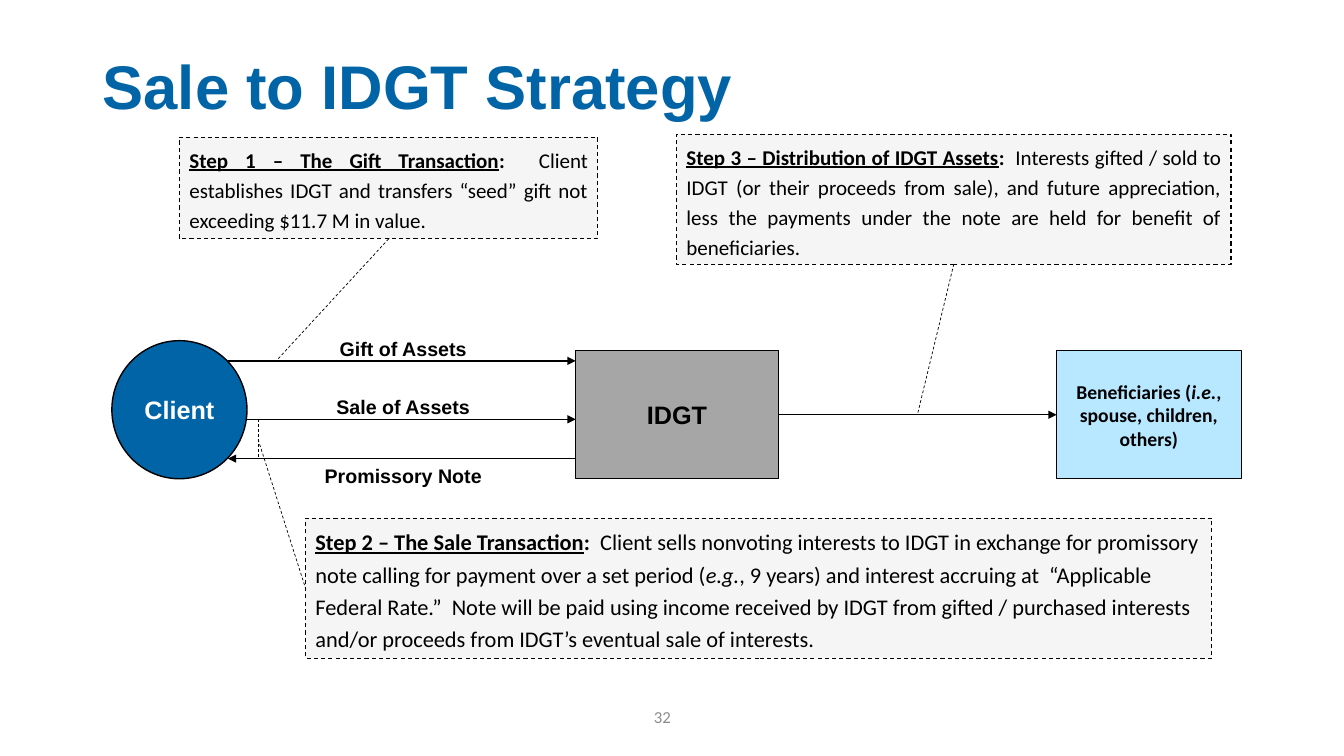
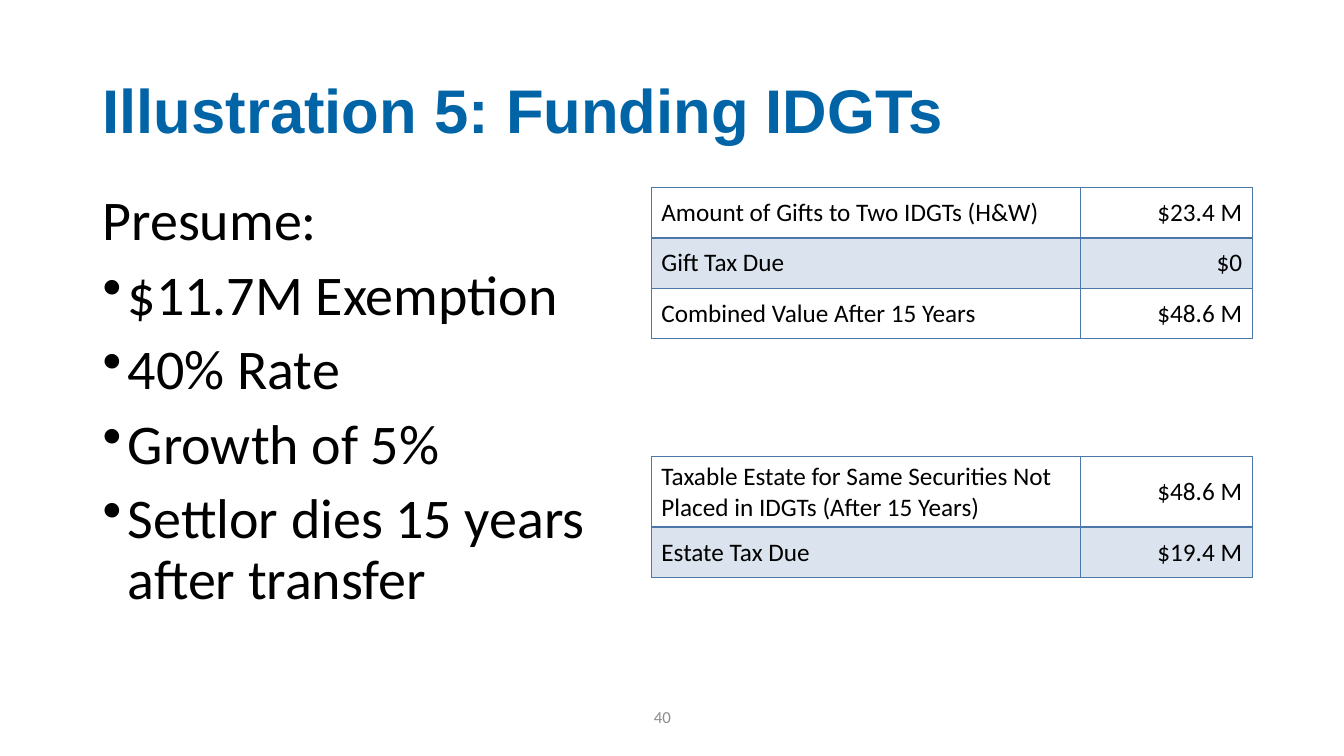
"""Build two slides that explain and illustrate a sale to an IDGT."""
from dataclasses import dataclass
from typing import NamedTuple, Optional, Union

from lxml import etree
from pptx import Presentation
from pptx import slide as s
from pptx import util as u
from pptx.dml import color as c
from pptx.dml import line as ln
from pptx.enum import dml, shapes, text
from pptx.oxml import ns
from pptx.shapes import autoshape as auto
from pptx.text import text as t

LEFT, CENTER = text.PP_ALIGN.LEFT, text.PP_ALIGN.CENTER
RIGHT, JUSTIFY = text.PP_ALIGN.RIGHT, text.PP_ALIGN.JUSTIFY
TOP, MIDDLE = text.MSO_ANCHOR.TOP, text.MSO_ANCHOR.MIDDLE
RECTANGLE, OVAL = shapes.MSO_SHAPE.RECTANGLE, shapes.MSO_SHAPE.OVAL
TOP_SIDE, LEFT_SIDE, BOTTOM_SIDE, RIGHT_SIDE = range(4)


@dataclass(frozen=True)
class Style:
    size: float
    font: str = "Calibri"
    color: str = "000000"
    bold: bool = False
    align: text.PP_ALIGN = LEFT
    anchor: text.MSO_ANCHOR = TOP
    spacing: float = 1.0


@dataclass(frozen=True)
class Theme:
    blue: str = "0064A6"
    gray: str = "A6A6A6"
    sky: str = "B7E8FF"
    pale: str = "F5F5F5"
    ink: str = "000000"
    rule: str = "4B78A8"
    band: str = "DBE4EE"
    thin: float = 0.5
    edge: float = 0.75
    solid: float = 1
    heavy: float = 2
    title: Style = Style(44, "Arial", "0064A6", True, LEFT, MIDDLE, 0.9)
    number: Style = Style(12, color="8C8C8C", align=CENTER, anchor=MIDDLE)
    body: Style = Style(40, spacing=0.9)
    step: Style = Style(15, align=JUSTIFY, spacing=1.2)
    wide_step: Style = Style(16, spacing=1.2)
    client: Style = Style(18, "Arial", "FFFFFF", True, CENTER, MIDDLE)
    trust: Style = Style(18, "Arial", bold=True, align=CENTER, anchor=MIDDLE)
    heirs: Style = Style(14, bold=True, align=CENTER, anchor=MIDDLE)
    flow: Style = Style(14, "Arial", bold=True, align=CENTER)
    label: Style = Style(18, anchor=MIDDLE)
    amount: Style = Style(18, align=RIGHT, anchor=MIDDLE)


THEME = Theme()


class Area(NamedTuple):
    col: float
    row: float
    cols: float
    rows: float


class Point(NamedTuple):
    col: float
    row: float


class Side(NamedTuple):
    box: auto.Shape
    site: int


class Span(NamedTuple):
    words: str
    bold: Optional[bool] = None
    italic: bool = False
    underline: bool = False


class Para(NamedTuple):
    spans: list[Span]
    bullet: bool = False


class Node(NamedTuple):
    area: Area
    fill: str
    style: Style
    spans: list[Span]
    width: float = THEME.solid
    kind: shapes.MSO_SHAPE = RECTANGLE
    dashed: bool = False


class Link(NamedTuple):
    start: Union[Point, Side]
    end: Union[Point, Side]
    leader: bool = False


class Entry(NamedTuple):
    label: str
    amount: str
    rows: float = 5


def grid(cells: float) -> u.Length:
    """Turn grid cells, ten to the inch, into a length."""
    return u.Inches(cells / 10)


def rgb(code: str) -> c.RGBColor:
    """Turn a hex code into a colour."""
    return c.RGBColor.from_string(code)


def add(parent: etree._Element, tag: str, **attributes: str) -> etree._Element:
    """Append a drawing element to its parent."""
    return etree.SubElement(parent, ns.qn(tag), attributes)


def write(frame: t.TextFrame, style: Style, paras: list[Para]) -> None:
    """Fill a text frame run by run."""
    frame.word_wrap = True
    frame.vertical_anchor = style.anchor
    for index, item in enumerate(paras):
        para = frame.add_paragraph() if index else frame.paragraphs[0]
        if item.bullet:
            properties = para._p.get_or_add_pPr()
            properties.set("marL", str(grid(2.5)))
            properties.set("indent", str(-grid(2.5)))
            add(properties, "a:buChar", char="•")
        para.alignment = style.align
        para.line_spacing = style.spacing
        if index:
            para.space_before = u.Pt(10)
        for piece in item.spans:
            span = para.add_run()
            span.text = piece.words
            font = span.font
            font.name, font.size = style.font, u.Pt(style.size)
            font.color.rgb = rgb(style.color)
            font.bold = style.bold if piece.bold is None else piece.bold
            font.italic, font.underline = piece.italic, piece.underline


def add_text(page: s.Slide, area: Area, style: Style, *paras: Para) -> None:
    """Place a text box."""
    box = page.shapes.add_textbox(*map(grid, area))
    write(box.text_frame, style, list(paras))


def plain(words: str, bullet: bool = False) -> Para:
    """Make a paragraph of one run."""
    return Para([Span(words)], bullet)


def stroke(line: ln.LineFormat, width: float, dashed: bool) -> None:
    """Style an outline or a connector."""
    line.color.rgb = rgb(THEME.ink)
    line.width = u.Pt(width)
    if dashed:
        line.dash_style = dml.MSO_LINE.DASH


def add_node(page: s.Slide, node: Node) -> auto.Shape:
    """Place a filled shape with its text."""
    box = page.shapes.add_shape(node.kind, *map(grid, node.area))
    box.shadow.inherit = False
    box.fill.solid()
    box.fill.fore_color.rgb = rgb(node.fill)
    stroke(box.line, node.width, node.dashed)
    write(box.text_frame, node.style, [Para(node.spans)])
    return box


def add_step(page: s.Slide, area: Area, style: Style, heading: str,
             *spans: Span) -> auto.Shape:
    """Place a dashed callout with an underlined heading."""
    lead = [Span(heading, True, underline=True), Span(":  ", True)]
    return add_node(page, Node(area, THEME.pale, style, lead + list(spans),
                               THEME.edge, dashed=True))


def add_link(page: s.Slide, link: Link) -> None:
    """Draw an arrow or a dashed leader between two ends."""
    line = page.shapes.add_connector(shapes.MSO_CONNECTOR.STRAIGHT, 0, 0, 0, 0)
    if isinstance(link.start, Side):
        line.begin_connect(*link.start)
    else:
        line.begin_x, line.begin_y = map(grid, link.start)
    if isinstance(link.end, Side):
        line.end_connect(*link.end)
    else:
        line.end_x, line.end_y = map(grid, link.end)
    stroke(line.line, THEME.thin if link.leader else THEME.solid, link.leader)
    if not link.leader:
        add(line.line._get_or_add_ln(), "a:tailEnd", type="triangle")
    add(line._element.spPr, "a:effectLst")


def add_ledger(page: s.Slide, row: float, entries: list[Entry]) -> None:
    """Place a ruled table of labels and amounts."""
    widths = (42.6, 17)
    area = Area(64.6, row, sum(widths), sum(entry.rows for entry in entries))
    table = page.shapes.add_table(len(entries), 2, *map(grid, area)).table
    table.first_row = table.horz_banding = False
    for column, width in zip(table.columns, widths):
        column.width = grid(width)
    for index, entry in enumerate(entries):
        table.rows[index].height = grid(entry.rows)
        rules = {"a:lnL": THEME.solid, "a:lnR": THEME.solid,
                 "a:lnT": THEME.heavy if index == 1 else THEME.solid,
                 "a:lnB": THEME.heavy if index == 0 else THEME.solid}
        for column, words in enumerate((entry.label, entry.amount)):
            cell = table.cell(index, column)
            style = THEME.amount if column else THEME.label
            write(cell.text_frame, style, [plain(words)])
            cell.vertical_anchor = style.anchor
            properties = cell._tc.get_or_add_tcPr()
            for tag, width in rules.items():
                border = add(properties, tag, w=str(u.Pt(width)))
                add(add(border, "a:solidFill"), "a:srgbClr", val=THEME.rule)
            if index % 2:
                cell.fill.solid()
                cell.fill.fore_color.rgb = rgb(THEME.band)
            else:
                cell.fill.background()


def add_page(deck, title: str, number: str, row: float, rows: float) -> s.Slide:
    """Start a blank page with its title and number."""
    page = deck.slides.add_slide(deck.slide_layouts[6])
    add_text(page, Area(50.7, 69.1, 30, 4), THEME.number, plain(number))
    add_text(page, Area(9.2, row, 115, rows), THEME.title, plain(title))
    return page


def build_strategy(deck) -> None:
    """Draw the flow between client, trust and beneficiaries."""
    page = add_page(deck, "Sale to IDGT Strategy", "32", 2.8, 12.2)
    gift = add_step(
        page, Area(17.8, 13.6, 41.5, 10.1), THEME.step,
        "Step 1 – The Gift Transaction",
        Span("Client establishes IDGT and transfers “seed” gift not exceeding $11.7 M in value."))
    sale = add_step(
        page, Area(30.3, 51.4, 89.9, 13.9), THEME.wide_step,
        "Step 2 – The Sale Transaction",
        Span("Client sells nonvoting interests to IDGT in exchange for promissory note "
             "calling for payment over a set period ("),
        Span("e.g.", italic=True),
        Span(", 9 years) and interest accruing at  “Applicable Federal Rate.”  Note will be "
             "paid using income received by IDGT from gifted / purchased interests and/or "
             "proceeds from IDGT’s eventual sale of interests."))
    payout = add_step(
        page, Area(67.1, 13.3, 55, 12.9), THEME.step,
        "Step 3 – Distribution of IDGT Assets",
        Span("Interests gifted / sold to IDGT (or their proceeds from sale), and future "
             "appreciation, less the payments under the note are held for benefit of "
             "beneficiaries."))
    add_node(page, Node(Area(11.1, 33.8, 13.4, 13.7), THEME.blue, THEME.client,
                        [Span("Client")], kind=OVAL))
    trust = add_node(page, Node(Area(57.1, 34.8, 20.1, 12.7), THEME.gray, THEME.trust,
                                [Span("IDGT")]))
    heirs = add_node(page, Node(
        Area(104.8, 34.8, 18.3, 12.7), THEME.sky, THEME.heirs,
        [Span("Beneficiaries ("), Span("i.e.", italic=True),
         Span(", spouse, children, others)")], THEME.edge))
    for words, row in (("Gift of Assets", 32.9), ("Sale of Assets", 38.7),
                       ("Promissory Note", 45.5)):
        add_text(page, Area(28.5, row, 23, 3.4), THEME.flow, plain(words))
    for link in (
            Link(Point(22.6, 35.8), Point(57.1, 35.8)),
            Link(Point(24.5, 41.6), Point(57.1, 41.6)),
            Link(Point(57.1, 45.5), Point(22.6, 45.5)),
            Link(Side(trust, RIGHT_SIDE), Side(heirs, LEFT_SIDE)),
            Link(Point(25.6, 41.6), Point(25.6, 45.5), True),
            Link(Point(25.6, 43.6), Side(sale, LEFT_SIDE), True),
            Link(Side(gift, BOTTOM_SIDE), Point(27.4, 35.8), True),
            Link(Side(payout, BOTTOM_SIDE), Point(91, 41.1), True)):
        add_link(page, link)


def build_illustration(deck) -> None:
    """Set the assumptions beside the two tax tables."""
    page = add_page(deck, "Illustration 5: Funding IDGTs", "40", 4, 14.5)
    facts = ("$11.7M Exemption", "40% Rate", "Growth of 5%",
             "Settlor dies 15 years after transfer")
    add_text(page, Area(9.2, 18.6, 52, 43.5), THEME.body, plain("Presume:"),
             *(plain(fact, True) for fact in facts))
    add_ledger(page, 18.6, [Entry("Amount of Gifts to Two IDGTs (H&W)", "$23.4 M"),
                            Entry("Gift Tax Due", "$0"),
                            Entry("Combined Value After 15 Years", "$48.6 M")])
    add_ledger(page, 45.3, [
        Entry("Taxable Estate for Same Securities Not Placed in IDGTs (After 15 Years)",
              "$48.6 M", 7),
        Entry("Estate Tax Due", "$19.4 M")])


def main() -> None:
    """Build and save the deck."""
    deck = Presentation()
    deck.slide_width, deck.slide_height = u.Inches(13.33), u.Inches(7.5)
    build_strategy(deck)
    build_illustration(deck)
    deck.save("out.pptx")


if __name__ == "__main__":
    main()
